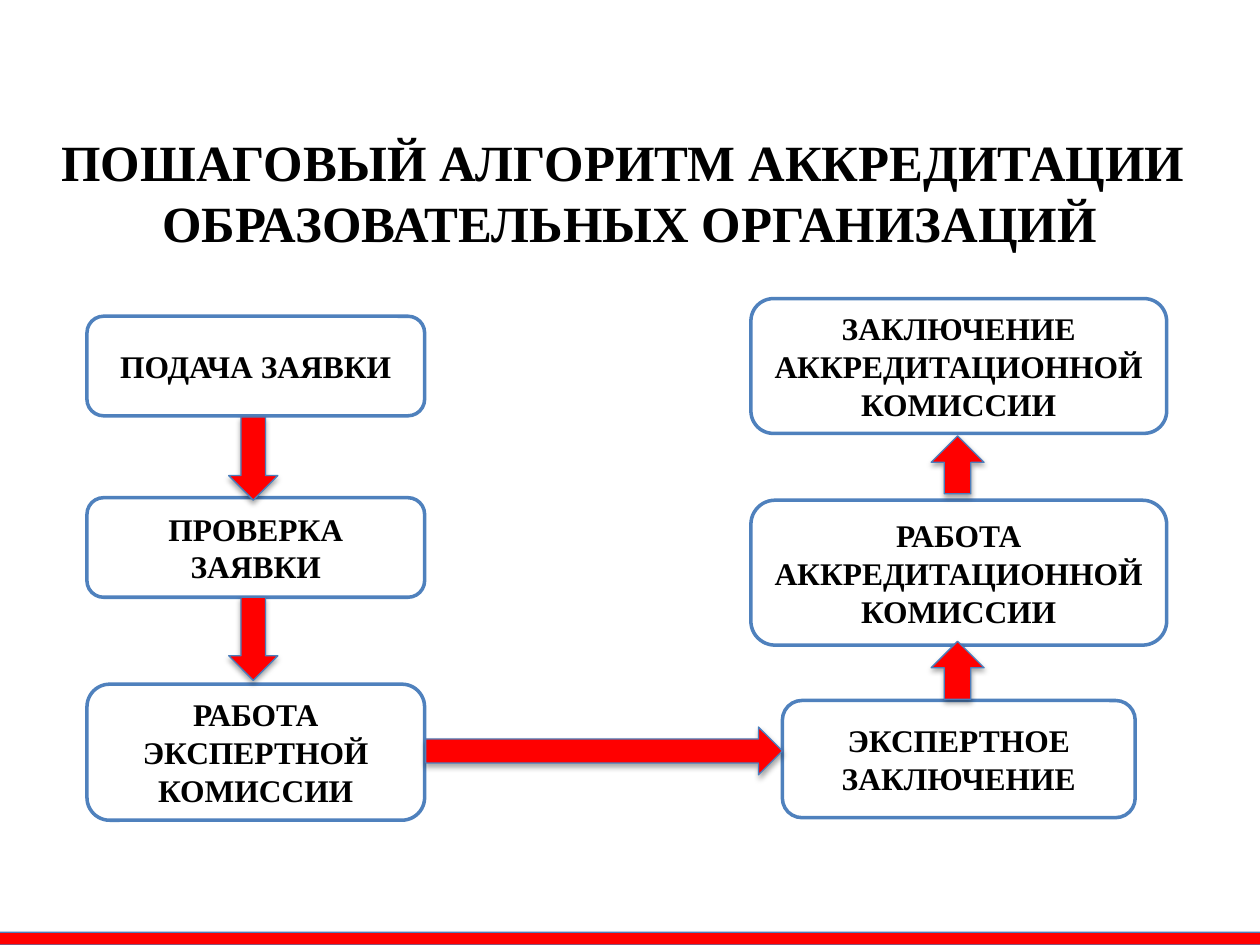
from lxml import etree
from pptx import Presentation
from pptx.dml.color import RGBColor
from pptx.enum import shapes, text
from pptx.oxml import ns
from pptx.util import Inches, Pt

FONT = "Times New Roman"
BLACK, WHITE, RED = "000000", "FFFFFF", "FF0000"
BOX_LINE, ARROW_LINE = "4F81BD", "4B7EBC"
SHAPE = shapes.MSO_SHAPE


def color(value):
    """Turn a hex string into a colour."""
    return RGBColor.from_string(value)


def add_run(paragraph, wording, size):
    """Add a bold black run to a centred paragraph."""
    paragraph.alignment = text.PP_ALIGN.CENTER
    run = paragraph.add_run()
    run.text = wording
    run.font.name, run.font.size, run.font.bold = FONT, Pt(size), True
    run.font.color.rgb = color(BLACK)


def add_block(slide, kind, box, fill, line, width):
    """Add a filled, outlined preset shape without a shadow."""
    shape = slide.shapes.add_shape(kind, *map(Inches, box))
    shape.shadow.inherit = False
    shape.fill.solid()
    shape.fill.fore_color.rgb = color(fill)
    shape.line.color.rgb = color(line)
    shape.line.width = Pt(width)
    return shape


def add_red_block(slide, kind, box):
    """Add a red shape with a soft shadow below it."""
    shape = add_block(slide, kind, box, RED, ARROW_LINE, 0.75)
    effects = shape._element.spPr.find(ns.qn("a:effectLst"))
    shadow = etree.SubElement(effects, ns.qn("a:outerShdw"), blurRad=str(Pt(3.1)),
                              dist=str(Pt(1.8)), dir="5400000", rotWithShape="0")
    shade = etree.SubElement(shadow, ns.qn("a:srgbClr"), val=BLACK)
    etree.SubElement(shade, ns.qn("a:alpha"), val="35000")


def add_title(slide, box, lines):
    """Place the title placeholder and write one paragraph per line."""
    title = slide.shapes.title
    title.left, title.top, title.width, title.height = map(Inches, box)
    frame = title.text_frame
    frame.word_wrap = True
    frame.auto_size = text.MSO_AUTO_SIZE.NONE
    frame.vertical_anchor = text.MSO_ANCHOR.TOP
    for index, line in enumerate(lines):
        paragraph = frame.add_paragraph() if index else frame.paragraphs[0]
        add_run(paragraph, line, 29)


def add_step_column(slide, box, steps, arrow, arrow_size, arrow_center, arrow_tops):
    """Stack centred steps in a column and put arrows between them."""
    left, top, width, _ = box
    for wording, offset, step_width, height in steps:
        step_box = (left + (width - step_width) / 2, top + offset, step_width, height)
        step = add_block(slide, SHAPE.ROUNDED_RECTANGLE, step_box, WHITE, BOX_LINE, 2)
        step.text_frame.word_wrap = True
        step.text_frame.vertical_anchor = text.MSO_ANCHOR.MIDDLE
        add_run(step.text_frame.paragraphs[0], wording, 18)
    arrow_width, arrow_height = arrow_size
    for offset in arrow_tops:
        add_red_block(slide, arrow, (left + arrow_center - arrow_width / 2, top + offset,
                                     arrow_width, arrow_height))


def main():
    """Build and save the accreditation algorithm slide."""
    presentation = Presentation()
    presentation.slide_width, presentation.slide_height = Inches(10), Inches(7.5)
    slide = presentation.slides.add_slide(presentation.slide_layouts[5])
    add_red_block(slide, SHAPE.PARALLELOGRAM, (-0.12, 7.4, 10.25, 0.1))
    add_title(slide, (0.32, 0.99, 9.36, 1.08),
              ["ПОШАГОВЫЙ АЛГОРИТМ АККРЕДИТАЦИИ ", "ОБРАЗОВАТЕЛЬНЫХ ОРГАНИЗАЦИЙ"])
    application_steps = [
        ("ПОДАЧА ЗАЯВКИ", 0, 2.68, 0.79),
        ("ПРОВЕРКА ЗАЯВКИ", 1.44, 2.68, 0.79),
        ("РАБОТА ЭКСПЕРТНОЙ КОМИССИИ", 2.92, 2.68, 1.08),
    ]
    add_step_column(slide, (0.69, 2.51, 2.68, 4), application_steps,
                    SHAPE.DOWN_ARROW, (0.39, 0.66), 1.32, [0.8, 2.23])
    conclusion_steps = [
        ("ЭКСПЕРТНОЕ ЗАКЛЮЧЕНИЕ", 3.19, 2.8, 0.93),
        ("РАБОТА АККРЕДИТАЦИОННОЙ КОМИССИИ", 1.6, 3.3, 1.15),
        ("ЗАКЛЮЧЕНИЕ АККРЕДИТАЦИОННОЙ КОМИССИИ", 0, 3.3, 1.07),
    ]
    add_step_column(slide, (5.96, 2.37, 3.3, 4.12), conclusion_steps,
                    SHAPE.UP_ARROW, (0.42, 0.46), 1.64, [2.72, 1.09])
    add_red_block(slide, SHAPE.RIGHT_ARROW, (3.38, 5.77, 2.83, 0.38))
    presentation.save("out.pptx")


if __name__ == "__main__":
    main()
